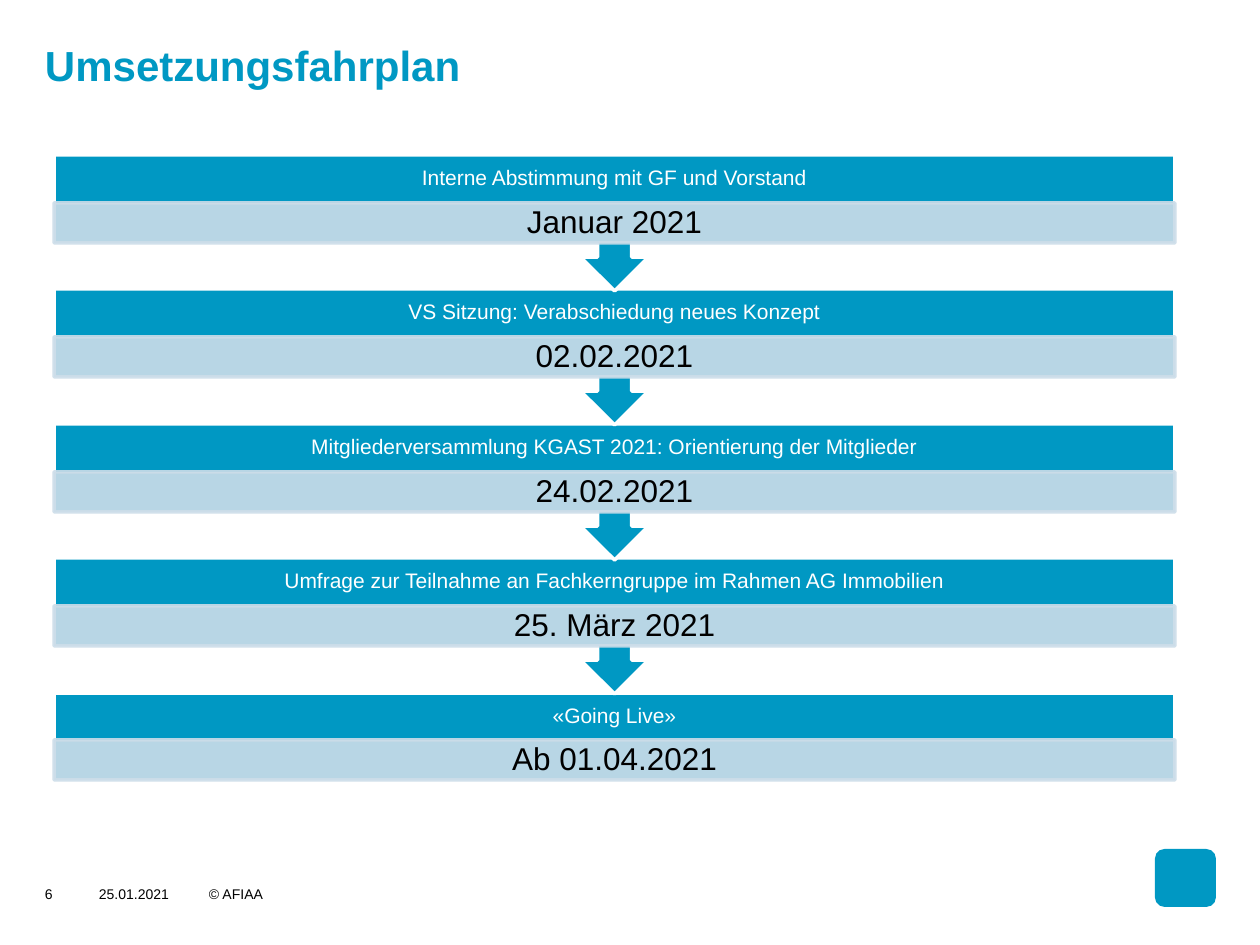
from pptx import Presentation
from pptx.dml.color import RGBColor
from pptx.enum.shapes import MSO_SHAPE
from pptx.enum.text import MSO_ANCHOR, PP_ALIGN
from pptx.oxml import parse_xml
from pptx.oxml.ns import nsdecls
from pptx.util import Emu, Pt

PX = 914400 // 126
BLUE = RGBColor(0x00, 0x98, 0xC3)
PALE = RGBColor(0xCC, 0xDD, 0xE9)
WHITE = RGBColor(0xFF, 0xFF, 0xFF)
BLACK = RGBColor(0x00, 0x00, 0x00)
FONT = "Arial"

RECTANGLE = MSO_SHAPE.RECTANGLE
ROUNDED = MSO_SHAPE.ROUNDED_RECTANGLE
CALLOUT = MSO_SHAPE.UP_ARROW_CALLOUT
LEFT, CENTER = PP_ALIGN.LEFT, PP_ALIGN.CENTER
TOP, MIDDLE = MSO_ANCHOR.TOP, MSO_ANCHOR.MIDDLE

STEPS = [
    ("Interne Abstimmung mit GF und Vorstand", "Januar 2021"),
    ("VS Sitzung: Verabschiedung neues Konzept", "02.02.2021"),
    ("Mitgliederversammlung KGAST 2021: Orientierung der Mitglieder", "24.02.2021"),
    ("Umfrage zur Teilnahme an Fachkerngruppe im Rahmen AG Immobilien", "25. März 2021"),
    ("«Going Live»", "Ab 01.04.2021"),
]
FOOTER = [(45, 29, "6", LEFT), (94, 80, "25.01.2021", CENTER), (209, 549, "© AFIAA", LEFT)]

STEP_LEFT, STEP_WIDTH = 54, 1121
FIRST_TOP, LAST_TOP = 155, 693
CALLOUT_HEIGHT, LAST_HEIGHT = 136, 88
HEADER_HEIGHT, DATE_HEIGHT = 48, 40


def px(*lengths):
    return [Emu(length * PX) for length in lengths]


def write(shape, text, size=12, color=BLACK, bold=False, align=LEFT,
          anchor=TOP, spacing=1.0, insets=(0, 0)):
    """Fill the shape with one paragraph; insets are horizontal and vertical px."""
    frame = shape.text_frame
    frame.word_wrap = True
    frame.vertical_anchor = anchor
    frame.margin_left = frame.margin_right = px(insets[0])[0]
    frame.margin_top = frame.margin_bottom = px(insets[1])[0]
    para = frame.paragraphs[0]
    para.alignment = align
    para.line_spacing = spacing
    span = para.add_run()
    span.text = text
    span.font.name = FONT
    span.font.size = Pt(size)
    span.font.bold = bold
    span.font.color.rgb = color


def set_opacity(fill_format, percent):
    color = fill_format._xPr.find(".//{*}solidFill/{*}srgbClr")
    color.append(parse_xml(f'<a:alpha {nsdecls("a")} val="{percent * 1000}"/>'))


class SlideBuilder:
    def __init__(self, slide):
        self.shapes = slide.shapes

    def text(self, left, top, width, height, text, **style):
        write(self.shapes.add_textbox(*px(left, top, width, height)), text, **style)

    def block(self, kind, left, top, width, height, fill, line=None, opacity=None):
        shape = self.shapes.add_shape(kind, *px(left, top, width, height))
        shape.shadow.inherit = False
        shape.fill.solid()
        shape.fill.fore_color.rgb = fill
        if line is None:
            shape.line.fill.background()
        else:
            shape.line.color.rgb = line
            shape.line.width = Pt(2)
        if opacity is not None:
            set_opacity(shape.fill, opacity)
            set_opacity(shape.line.fill, opacity)
        return shape

    def step(self, top, header, date, is_last):
        kind, height = (RECTANGLE, LAST_HEIGHT) if is_last else (CALLOUT, CALLOUT_HEIGHT)
        band = self.block(kind, STEP_LEFT, top, STEP_WIDTH, height, BLUE, WHITE)
        if not is_last:
            band.rotation = 180
            for index, value in enumerate((0.25, 0.25, 0.25, 0.65)):
                band.adjustments[index] = value
        self.text(STEP_LEFT, top, STEP_WIDTH, HEADER_HEIGHT, header, color=WHITE,
                  align=CENTER, anchor=MIDDLE, spacing=0.9, insets=(11, 11))
        date_top = top + HEADER_HEIGHT - is_last
        bar = self.block(RECTANGLE, STEP_LEFT, date_top, STEP_WIDTH, DATE_HEIGHT,
                         PALE, PALE, opacity=90)
        write(bar, date, size=18, align=CENTER, anchor=MIDDLE, spacing=0.9, insets=(18, 4))


def main():
    deck = Presentation()
    deck.slide_width, deck.slide_height = px(1260, 945)
    page = SlideBuilder(deck.slides.add_slide(deck.slide_layouts[6]))

    page.block(ROUNDED, 1155, 849, 61, 58, BLUE)
    for left, width, label, align in FOOTER:
        page.text(left, 886, width, 21, label, size=8, align=align)
    page.text(45, 37, 1169, 53, "Umsetzungsfahrplan", size=24, color=BLUE,
              bold=True, spacing=1.05)

    last = len(STEPS) - 1
    # Later steps lie behind, so each arrow tip covers the step below it.
    for index, (header, date) in reversed(list(enumerate(STEPS))):
        top = FIRST_TOP + (LAST_TOP - FIRST_TOP) * index // last
        page.step(top, header, date, index == last)

    deck.save("out.pptx")


if __name__ == "__main__":
    main()
